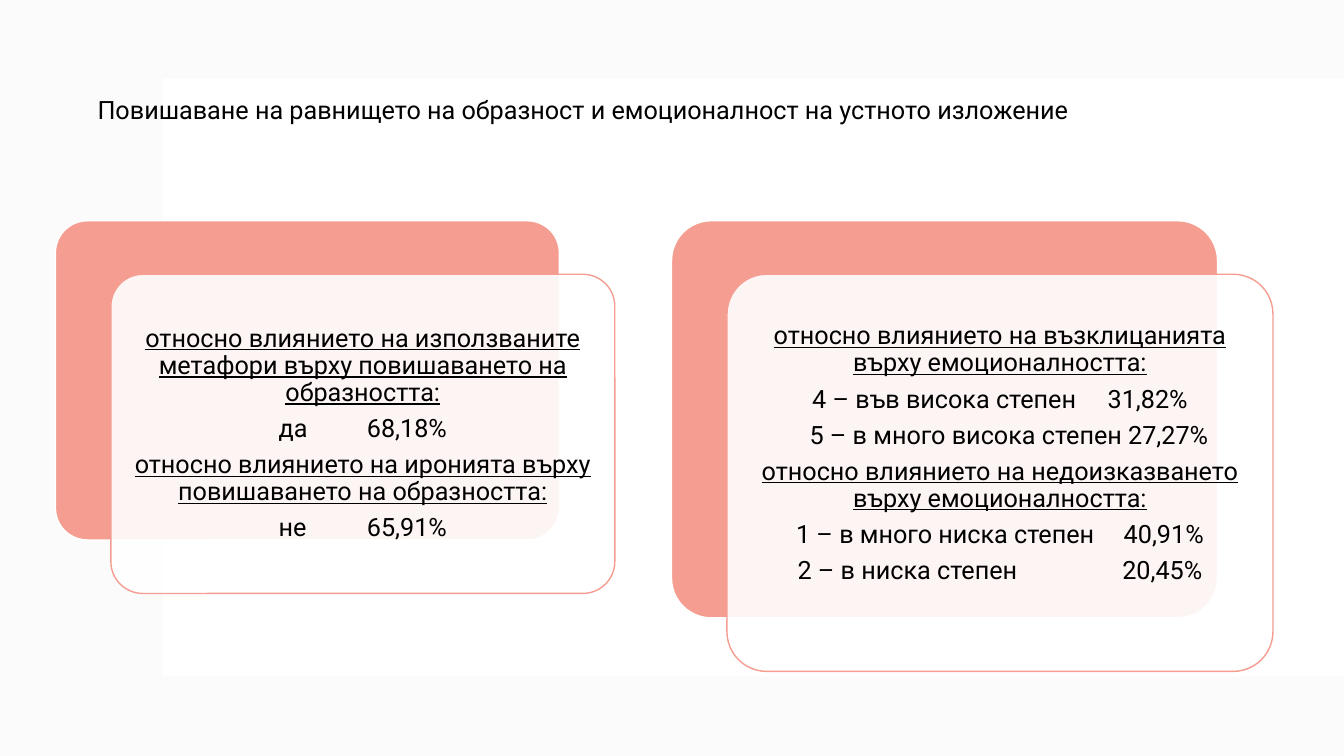
from pptx import Presentation
from pptx.util import Pt
from pptx.dml.color import RGBColor
from pptx.enum.shapes import MSO_SHAPE as Kind
from pptx.enum.text import MSO_ANCHOR as Anchor, PP_ALIGN as Align, MSO_AUTO_SIZE as Auto
from pptx.oxml.ns import qn
from lxml.etree import SubElement as Sub

BLACK = RGBColor(0, 0, 0)
WHITE = RGBColor(255, 255, 255)
GREY = RGBColor(0xF4, 0xF4, 0xF4)
CORAL = RGBColor(0xF4, 0x9D, 0x90)

TITLE = "Повишаване на равнището на образност и емоционалност на устното изложение"

# 
CARDS = [
    {"left": 39.6, "size": (360, 228), "foot": 5, "lines": [
        ("относно влиянието на използваните метафори върху повишаването на образността:", True, 0, 0),
        ("да\t68,18%", False, 63, 0),
        ("относно влиянието на иронията върху повишаването на образността:", True, 0, 0),
        ("не\t65,91%", False, 63, 0)]},
    {"left": 479.7, "size": (390, 283.7), "foot": 32, "lines": [
        ("относно влиянието на възклицанията върху емоционалността:", True, 0, 0),
        ("4 – във висока степен\t31,82%", False, 211, 0),
        ("5 – в много висока степен 27,27%", False, 0, 13),
        ("относно влиянието на недоизказването върху емоционалността:", True, 0, 0),
        ("1 – в много ниска степен\t40,91%", False, 234, 0),
        ("2 – в ниска степен\t20,45%", False, 232, 0)]},
]
TOP, STEP = 157.7, (39.6, 38.2)
FONT = {"name": "Roboto", "size": Pt(18)}

deck = Presentation()
deck.slide_width, deck.slide_height = Pt(960), Pt(540)
slide = deck.slides.add_slide(deck.slide_layouts[6])


def panel(kind, box, fill, alpha=100, line=None):
    shape = slide.shapes.add_shape(kind, *map(Pt, box))
    shape.shadow.inherit = False
    shape.fill.solid()
    shape.fill.fore_color.rgb = fill
    if alpha < 100:
        tone = shape.fill._xPr.find(qn("a:solidFill"))[0]
        Sub(tone, qn("a:alpha"), val=str(alpha * 1000))
    if line is None:
        shape.line.fill.background()
    else:
        shape.line.color.rgb = line
        shape.line.width = Pt(1)
        shape.adjustments[0] = 0.1
    return shape


def write(para, text, under=False):
    run = para.add_run()
    run.text = text
    for key, val in {**FONT, "underline": under}.items():
        setattr(run.font, key, val)
    run.font.color.rgb = BLACK


def fill_card(frame, lines, foot):
    form = {"word_wrap": True, "vertical_anchor": Anchor.MIDDLE,
            "margin_left": Pt(5), "margin_right": Pt(5),
            "margin_top": Pt(5), "margin_bottom": Pt(foot)}
    for key, val in form.items():
        setattr(frame, key, val)
    for i, (text, under, tab, shift) in enumerate(lines):
        para = frame.add_paragraph() if i else frame.paragraphs[0]
        for key, val in {"alignment": Align.CENTER, "line_spacing": 0.9,
                         "space_after": Pt(6.3)}.items():
            setattr(para, key, val)
        props = para._p.get_or_add_pPr()
        if shift:
            props.set("marL", str(Pt(shift)))
        if tab:
            stops = Sub(props, qn("a:tabLst"))
            Sub(stops, qn("a:tab"), pos=str(Pt(tab)), algn="l")
        write(para, text, under)


panel(Kind.RECTANGLE, (0, 0, 960, 540), GREY, 35)
panel(Kind.RECTANGLE, (116.4, 56, 843.6, 427), WHITE)

for card in CARDS:
    left, size = card["left"], card["size"]
    panel(Kind.ROUNDED_RECTANGLE, (left, TOP, *size), CORAL, line=WHITE)
    front = panel(Kind.ROUNDED_RECTANGLE, (left + STEP[0], TOP + STEP[1], *size),
                  WHITE, 90, CORAL)
    fill_card(front.text_frame, card["lines"], card["foot"])

head = slide.shapes.add_textbox(Pt(62.6), Pt(64.1), Pt(835), Pt(29)).text_frame
head.word_wrap = True
head.auto_size = Auto.SHAPE_TO_FIT_TEXT
write(head.paragraphs[0], TITLE)

deck.save("out.pptx")
